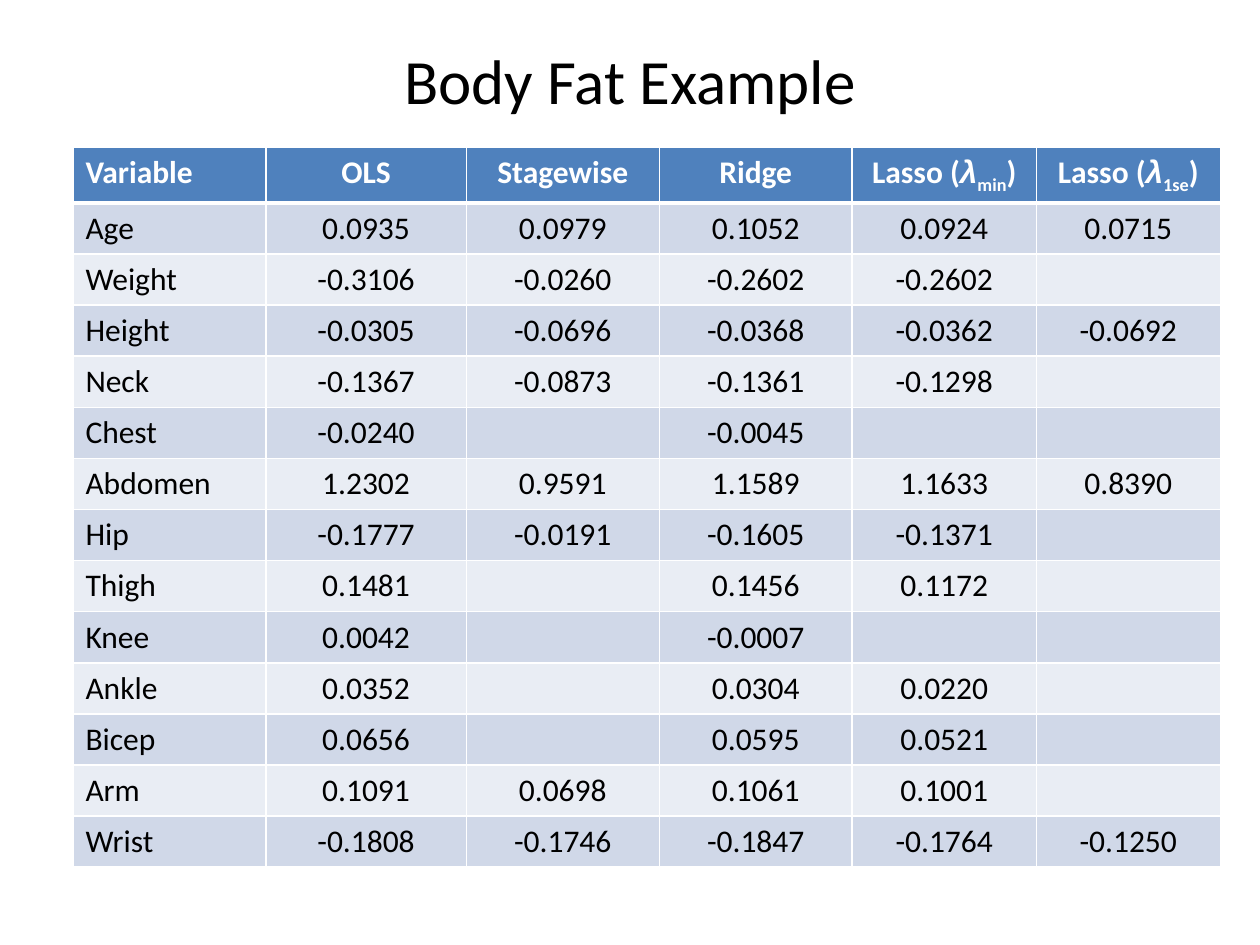
from lxml.etree import SubElement
from pptx import Presentation
from pptx.dml.color import RGBColor
from pptx.enum.text import MSO_ANCHOR as ANCHOR, PP_ALIGN as ALIGN
from pptx.oxml.ns import qn
from pptx.util import Cm, Pt

COLORS = {"header": "4F81BD", "odd": "D0D8E8", "even": "E9EDF4",
          "white": "FFFFFF", "black": "000000"}
BODY = {"name": "Calibri", "size": Pt(18), "bold": False, "italic": False}
HEAD = {**BODY, "bold": True}
LAMBDA = {**HEAD, "name": "Arial", "italic": True}
TITLE = {**BODY, "size": Pt(36)}

COL_WIDTHS = [3.89, 4.04, 3.89, 3.89, 3.71, 3.71]
ROW_HEIGHT = 1.03
HEADERS = ["Variable", "OLS", "Stagewise", "Ridge"]
LASSO_SUBSCRIPTS = ["min", "1se"]
ROWS = [
    ["Age", "0.0935", "0.0979", "0.1052", "0.0924", "0.0715"],
    ["Weight", "-0.3106", "-0.0260", "-0.2602", "-0.2602", ""],
    ["Height", "-0.0305", "-0.0696", "-0.0368", "-0.0362", "-0.0692"],
    ["Neck", "-0.1367", "-0.0873", "-0.1361", "-0.1298", ""],
    ["Chest", "-0.0240", "", "-0.0045", "", ""],
    ["Abdomen", "1.2302", "0.9591", "1.1589", "1.1633", "0.8390"],
    ["Hip", "-0.1777", "-0.0191", "-0.1605", "-0.1371", ""],
    ["Thigh", "0.1481", "", "0.1456", "0.1172", ""],
    ["Knee", "0.0042", "", "-0.0007", "", ""],
    ["Ankle", "0.0352", "", "0.0304", "0.0220", ""],
    ["Bicep", "0.0656", "", "0.0595", "0.0521", ""],
    ["Arm", "0.1091", "0.0698", "0.1061", "0.1001", ""],
    ["Wrist", "-0.1808", "-0.1746", "-0.1847", "-0.1764", "-0.1250"],
]


def add_run(p, text, fmt, color, baseline=0):
    """Append a formatted run, lowered when baseline is negative."""
    r = p.add_run()
    r.text = text
    for key, value in fmt.items():
        setattr(r.font, key, value)
    r.font.color.rgb = RGBColor.from_string(COLORS[color])
    if baseline:
        r._r.get_or_add_rPr().set("baseline", str(baseline * 1000))


def add_title(s, text):
    """Add the centred slide title."""
    sp = s.shapes.add_textbox(Cm(1.27), Cm(0), Cm(22.86), Cm(3.18))
    tf = sp.text_frame
    tf.word_wrap = True
    tf.vertical_anchor = ANCHOR.MIDDLE
    p = tf.paragraphs[0]
    p.alignment = ALIGN.CENTER
    add_run(p, text, TITLE, "black")


def style_cell(cell, fill, bottom=1, top=1):
    """Give a cell white borders and a solid fill."""
    tc_pr = cell._tc.get_or_add_tcPr()
    for side, width in {"L": 1, "R": 1, "T": top, "B": bottom}.items():
        ln = SubElement(tc_pr, qn(f"a:ln{side}"), w=str(Pt(width)))
        solid = SubElement(ln, qn("a:solidFill"))
        SubElement(solid, qn("a:srgbClr"), val=COLORS["white"])
    cell.fill.solid()
    cell.fill.fore_color.rgb = RGBColor.from_string(COLORS[fill])


def cell_paragraph(cell, col):
    """Return the cell's paragraph, centred except in the first column."""
    p = cell.text_frame.paragraphs[0]
    p.alignment = ALIGN.CENTER if col else ALIGN.LEFT
    return p


def fill_header(table):
    """Write the header row, with subscripts in the lasso columns."""
    for col in range(len(COL_WIDTHS)):
        cell = table.cell(0, col)
        style_cell(cell, "header", bottom=3)
        p = cell_paragraph(cell, col)
        if col < len(HEADERS):
            add_run(p, HEADERS[col], HEAD, "white")
            continue
        add_run(p, "Lasso (", HEAD, "white")
        add_run(p, "λ", LAMBDA, "white")
        add_run(p, LASSO_SUBSCRIPTS[col - len(HEADERS)], HEAD, "white", -25)
        add_run(p, ")", HEAD, "white")


def fill_body(table):
    """Write the coefficients on alternating bands."""
    for row, values in enumerate(ROWS, 1):
        for col, value in enumerate(values):
            cell = table.cell(row, col)
            style_cell(cell, "odd" if row % 2 else "even", top=3 if row == 1 else 1)
            p = cell_paragraph(cell, col)
            if value:
                add_run(p, value, BODY, "black")


def add_coefficients(s):
    """Add the table of coefficients by method."""
    n_rows = len(ROWS) + 1
    table = s.shapes.add_table(n_rows, len(COL_WIDTHS), Cm(1.47), Cm(2.97),
                               Cm(sum(COL_WIDTHS)), Cm(n_rows * ROW_HEIGHT)).table
    for column, width in zip(table.columns, COL_WIDTHS):
        column.width = Cm(width)
    for row in table.rows:
        row.height = Cm(ROW_HEIGHT)
    fill_header(table)
    fill_body(table)


def main():
    """Build and save the slide."""
    prs = Presentation()
    prs.slide_width, prs.slide_height = Cm(25.4), Cm(19.05)
    s = prs.slides.add_slide(prs.slide_layouts[6])
    add_title(s, "Body Fat Example")
    add_coefficients(s)
    prs.save("out.pptx")


if __name__ == "__main__":
    main()
